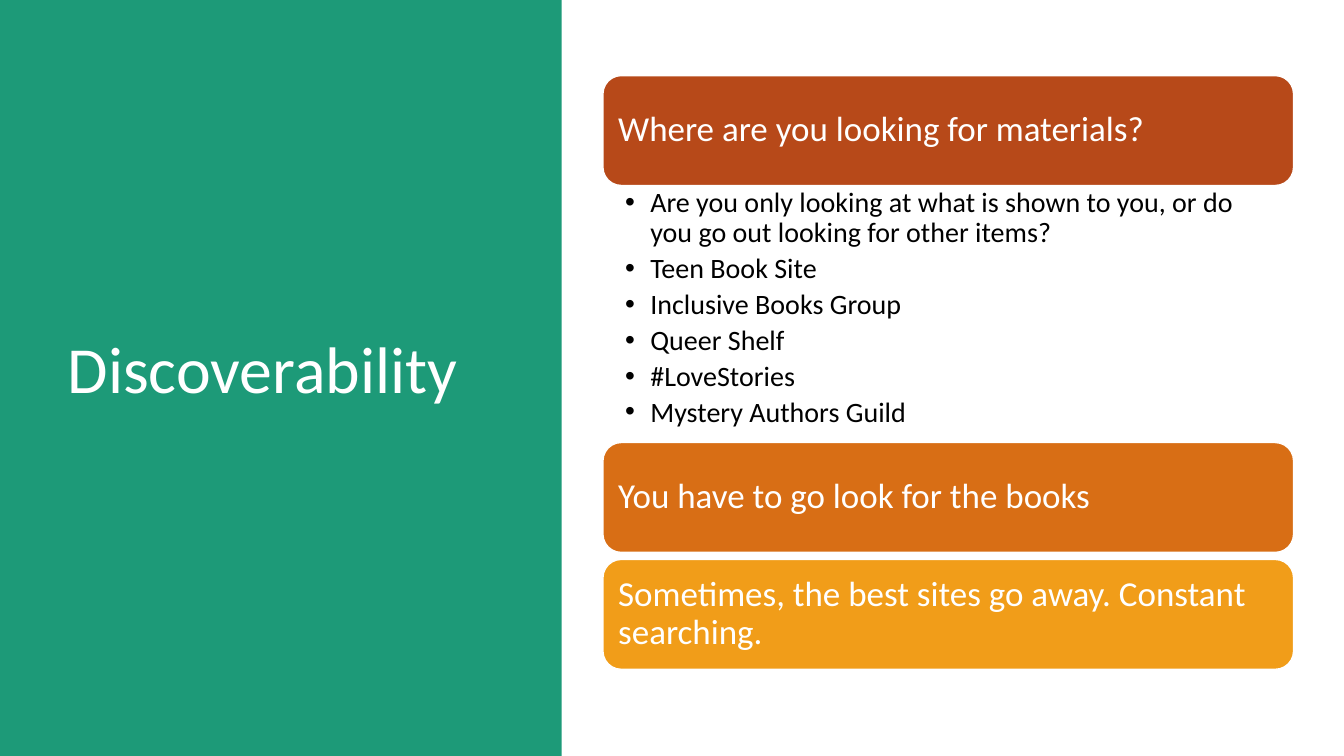
import pptx
import pptx.util
import pptx.dml.color
import pptx.enum.shapes
import pptx.enum.text
from pptx.util import Inches

RGBColor = pptx.dml.color.RGBColor
GREEN = RGBColor(0x1D, 0x9A, 0x78)
RUST = RGBColor(0xB7, 0x49, 0x19)
ORANGE = RGBColor(0xD8, 0x6E, 0x15)
AMBER = RGBColor(0xF1, 0x9D, 0x19)
WHITE = RGBColor(0xFF, 0xFF, 0xFF)
BLACK = RGBColor(0x00, 0x00, 0x00)

FONT = "Calibri"
BAR_H = 1.09
BAR_GAP = 0.07
LIST_H = 2.55

SITES = [
    "Are you only looking at what is shown to you, or do you go out looking for other items?",
    "Teen Book Site",
    "Inclusive Books Group",
    "Queer Shelf",
    "#LoveStories",
    "Mystery Authors Guild",
]


def place(sp, left, top, width, height):
    sp.left, sp.top = Inches(left), Inches(top)
    sp.width, sp.height = Inches(width), Inches(height)


def set_frame(tf, anchor, left, top, right, bottom):
    tf.word_wrap = True
    tf.auto_size = pptx.enum.text.MSO_AUTO_SIZE.NONE
    tf.vertical_anchor = anchor
    tf.margin_left, tf.margin_right = Inches(left), Inches(right)
    tf.margin_top, tf.margin_bottom = Inches(top), Inches(bottom)


def format_text(tf, size, color, space_after=0):
    for p in tf.paragraphs:
        p.alignment = pptx.enum.text.PP_ALIGN.LEFT
        p.line_spacing = 0.9
        p.space_before = pptx.util.Pt(0)
        p.space_after = pptx.util.Pt(space_after)
        for r in p.runs:
            r.font.name = FONT
            r.font.size = pptx.util.Pt(size)
            r.font.color.rgb = color


def add_block(slide, kind, fill, left, top, width, height):
    sp = slide.shapes.add_shape(kind, Inches(left), Inches(top), Inches(width), Inches(height))
    sp.shadow.inherit = False
    sp.fill.solid()
    sp.fill.fore_color.rgb = fill
    sp.line.fill.background()
    return sp


def add_title_panel(slide, left, top, width, height):
    # Green panel, sent behind the title
    panel = add_block(slide, pptx.enum.shapes.MSO_SHAPE.RECTANGLE, GREEN, left, top, width, height)
    slide.shapes.title.element.addprevious(panel.element)

    # Title
    title = slide.shapes.title
    place(title, left + 0.57, top + 0.68, 4.16, 6.02)
    tf = title.text_frame
    tf.text = "Discoverability"
    set_frame(tf, pptx.enum.text.MSO_ANCHOR.MIDDLE, 0.1, 0.05, 0.1, 0.05)
    format_text(tf, 47, WHITE)


def add_bar(slide, text, fill, left, top, width):
    sp = add_block(slide, pptx.enum.shapes.MSO_SHAPE.ROUNDED_RECTANGLE, fill,
                   left, top, width, BAR_H)
    sp.line.color.rgb = WHITE
    sp.line.width = pptx.util.Pt(1)
    tf = sp.text_frame
    tf.text = text
    set_frame(tf, pptx.enum.text.MSO_ANCHOR.MIDDLE, 0.1, 0.1, 0.1, 0.1)
    format_text(tf, 25, WHITE)


def add_site_list(slide, left, top, width):
    body = slide.placeholders[1]
    place(body, left, top, width, LIST_H)
    tf = body.text_frame
    tf.text = "\n".join(SITES)
    set_frame(tf, pptx.enum.text.MSO_ANCHOR.TOP, 0.22, 0.03, 0.19, 0.03)
    format_text(tf, 20, BLACK, space_after=4)
    # Hanging bullets
    for p in tf.paragraphs:
        pPr = p._p.get_or_add_pPr()
        pPr.set("marL", str(Inches(0.25)))
        pPr.set("indent", str(Inches(-0.25)))
        bullet = pptx.oxml.parse_xml(
            '<a:buChar xmlns:a="http://schemas.openxmlformats.org/drawingml/2006/main" char="•"/>')
        pPr.append(bullet)


def add_topics(slide, left, top, width):
    # First bar with its list directly below
    add_bar(slide, "Where are you looking for materials?", RUST, left, top, width)
    add_site_list(slide, left, top + BAR_H, width)

    # Remaining bars
    y = top + BAR_H + LIST_H
    for text, fill in [
        ("You have to go look for the books", ORANGE),
        ("Sometimes, the best sites go away. Constant searching.", AMBER),
    ]:
        add_bar(slide, text, fill, left, y, width)
        y += BAR_H + BAR_GAP


def main():
    prs = pptx.Presentation()
    prs.slide_width, prs.slide_height = Inches(13.33), Inches(7.5)
    slide = prs.slides.add_slide(prs.slide_layouts[1])
    add_title_panel(slide, 0, 0, 5.57, 7.5)
    add_topics(slide, 5.98, 0.75, 6.85)
    prs.save("out.pptx")


if __name__ == "__main__":
    main()
